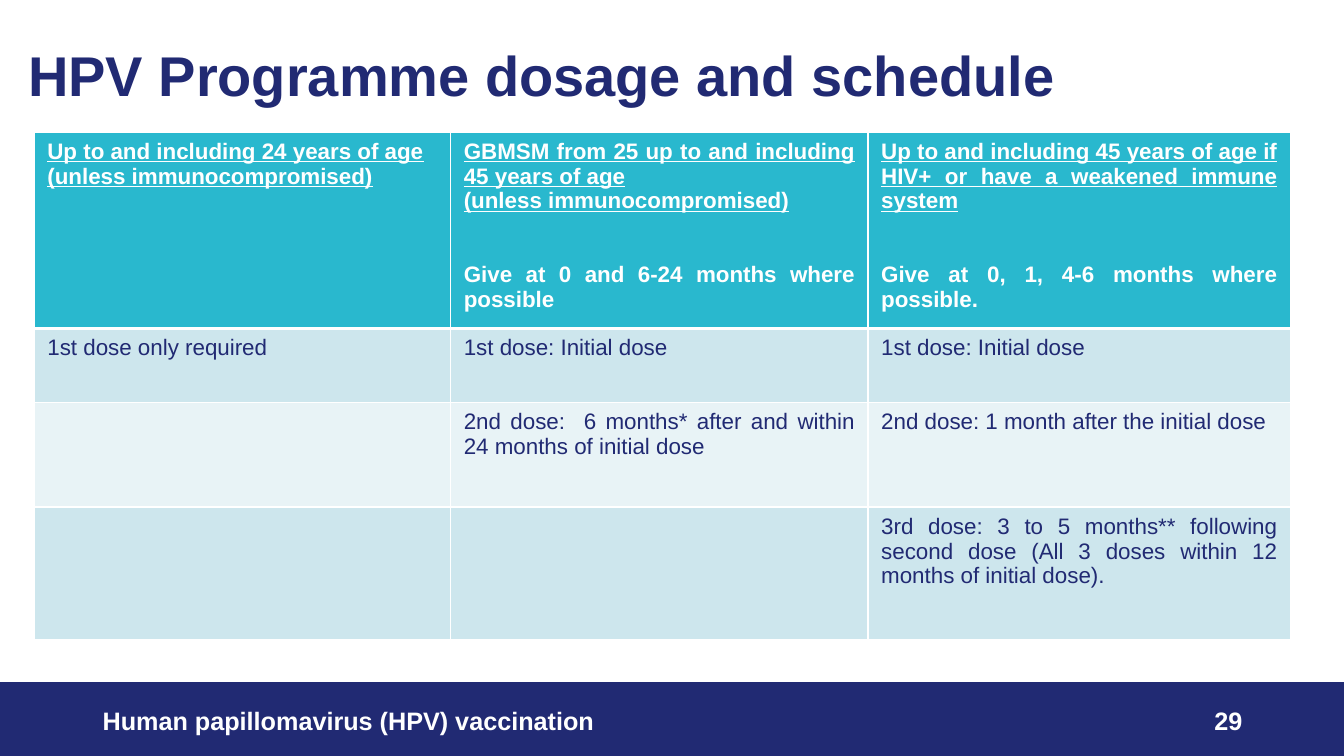
from lxml.etree import SubElement
from pptx import Presentation
from pptx.dml.color import RGBColor
from pptx.enum.shapes import MSO_SHAPE
from pptx.enum.text import MSO_ANCHOR, MSO_AUTO_SIZE, PP_ALIGN
from pptx.oxml.ns import qn
from pptx.util import Inches, Pt

COLORS = {
    "navy": "212A73",
    "teal": "29B8CE",
    "band_dark": "CDE6ED",
    "band_light": "E8F3F6",
    "white": "FFFFFF",
}
COLUMN_WIDTHS = [4.13, 4.14, 4.19]
ROW_HEIGHTS = [1.95, 0.73, 1.04, 1.32]
UNLESS = "(unless immunocompromised)"
GROUPS = [
    (["Up to and including 24 years of age", UNLESS], None),
    (["GBMSM from 25 up to and including 45 years of age", UNLESS],
     "Give at 0 and 6-24 months where possible"),
    (["Up to and including 45 years of age if HIV+ or have a weakened immune system"],
     "Give at 0, 1, 4-6 months where possible."),
]
DOSES = [
    ["1st dose only required", "1st dose: Initial dose", "1st dose: Initial dose"],
    ["", "2nd dose:  6 months* after and within 24 months of initial dose",
     "2nd dose: 1 month after the initial dose"],
    ["", "", "3rd dose: 3 to 5 months** following second dose "
             "(All 3 doses within 12 months of initial dose)."],
]


def rgb(name):
    return RGBColor.from_string(COLORS[name])


class SlideBuilder:
    """Holds the style and the current slide."""

    font_name = "Arial"

    def __init__(self, presentation):
        self.slide = presentation.slides.add_slide(presentation.slide_layouts[5])

    def style(self, paragraph, size, color, bold=False, align=PP_ALIGN.LEFT):
        paragraph.alignment = align
        font = paragraph.font
        font.name, font.size, font.bold = self.font_name, Pt(size), bold
        font.color.rgb = rgb(color)

    def title(self, text, left, top, width, height):
        title = self.slide.shapes.title
        title.left, title.top = Inches(left), Inches(top)
        title.width, title.height = Inches(width), Inches(height)
        frame = title.text_frame
        frame.text = text
        frame.word_wrap = True
        frame.auto_size = MSO_AUTO_SIZE.NONE
        frame.vertical_anchor = MSO_ANCHOR.TOP
        frame.paragraphs[0].line_spacing = 0.9
        self.style(frame.paragraphs[0], 40, "navy", True)

    def band(self, left, top, width, height):
        band = self.slide.shapes.add_shape(
            MSO_SHAPE.RECTANGLE, Inches(left), Inches(top), Inches(width), Inches(height))
        band.shadow.inherit = False
        band.fill.solid()
        band.fill.fore_color.rgb = band.line.color.rgb = rgb("navy")
        band.line.width = Pt(1)

    def footer(self, text, left, width, align):
        footer = self.slide.shapes.add_textbox(
            Inches(left), Inches(6.95), Inches(width), Inches(0.4))
        frame = footer.text_frame
        frame.text = text
        frame.word_wrap = True
        frame.vertical_anchor = MSO_ANCHOR.MIDDLE
        self.style(frame.paragraphs[0], 18, "white", True, align)

    def borders(self, cell, top, bottom):
        properties = cell._tc.get_or_add_tcPr()
        for side, width in (("L", 1), ("R", 1), ("T", top), ("B", bottom)):
            line = SubElement(properties, qn(f"a:ln{side}"), w=str(Pt(width)))
            fill = SubElement(line, qn("a:solidFill"))
            SubElement(fill, qn("a:srgbClr"), val=COLORS["white"])

    def cell(self, cell, lines, fill, color, bold=False, top=1, bottom=1):
        cell.margin_left = cell.margin_right = Inches(0.13)
        cell.margin_top = cell.margin_bottom = Inches(0.07)
        self.borders(cell, top, bottom)
        cell.fill.solid()
        cell.fill.fore_color.rgb = rgb(fill)
        cell.text = "\n".join(lines)
        for paragraph in cell.text_frame.paragraphs:
            self.style(paragraph, 16, color, bold, PP_ALIGN.JUSTIFY)

    def schedule(self, left, top):
        schedule = self.slide.shapes.add_table(
            len(ROW_HEIGHTS), len(COLUMN_WIDTHS), Inches(left), Inches(top),
            Inches(sum(COLUMN_WIDTHS)), Inches(sum(ROW_HEIGHTS))).table
        for column, width in zip(schedule.columns, COLUMN_WIDTHS):
            column.width = Inches(width)
        for row, height in zip(schedule.rows, ROW_HEIGHTS):
            row.height = Inches(height)
        for index, (heading, timing) in enumerate(GROUPS):
            header = schedule.cell(0, index)
            lines = heading + [timing] if timing else heading
            self.cell(header, lines, "teal", "white", True, bottom=3)
            paragraphs = header.text_frame.paragraphs
            for paragraph in paragraphs[:len(heading)]:
                paragraph.font.underline = True
            if timing:
                paragraphs[-1].space_before = Pt(35)
        for number, doses in enumerate(DOSES, 1):
            fill = "band_dark" if number % 2 else "band_light"
            for index, dose in enumerate(doses):
                self.cell(schedule.cell(number, index), [dose], fill, "navy",
                          top=3 if number == 1 else 1)


def main():
    presentation = Presentation()
    presentation.slide_width = Inches(13.33)
    presentation.slide_height = Inches(7.5)
    builder = SlideBuilder(presentation)
    builder.band(0, 6.77, 13.33, 0.73)
    builder.title("HPV Programme dosage and schedule", 0.18, 0.43, 13.21, 1.01)
    builder.schedule(0.34, 1.31)
    builder.footer("Human papillomavirus (HPV) vaccination", 0.92, 8, PP_ALIGN.LEFT)
    builder.footer("29", 9.42, 3, PP_ALIGN.RIGHT)
    presentation.save("out.pptx")


if __name__ == "__main__":
    main()
